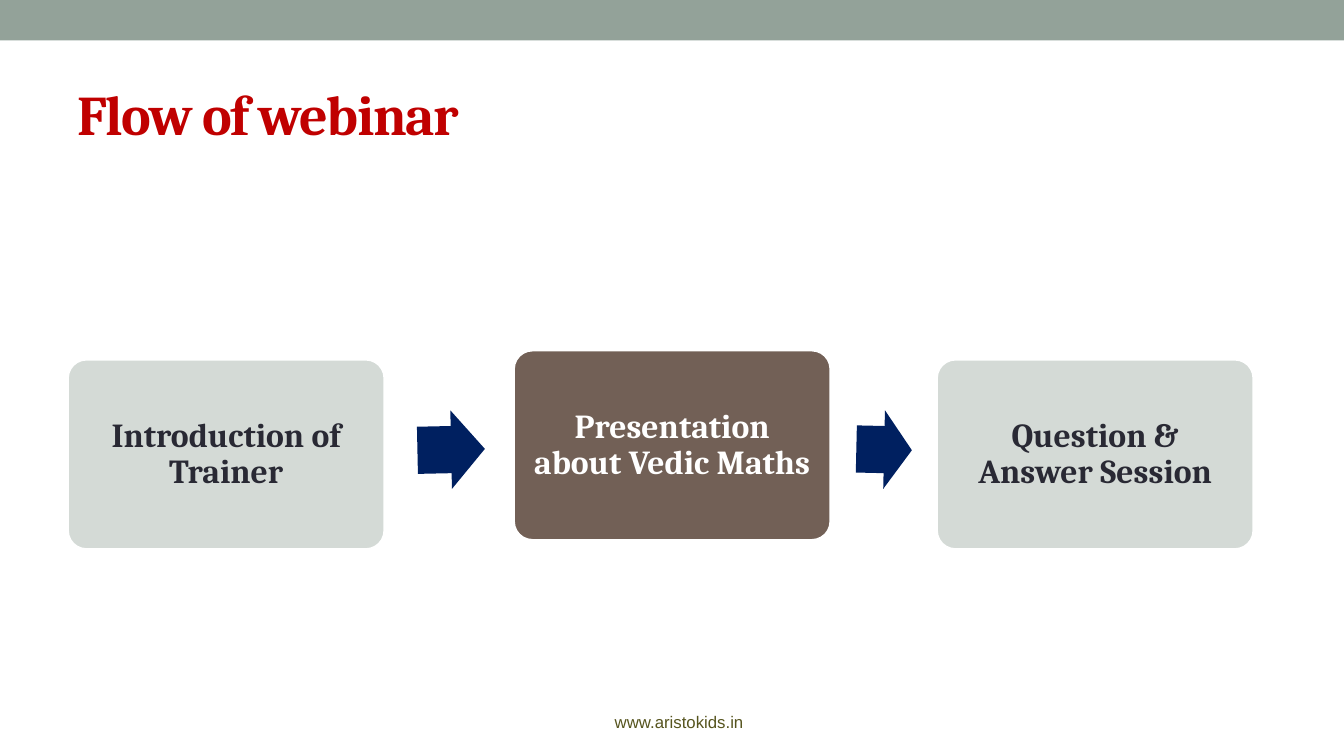
from dataclasses import dataclass

from pptx import Presentation
from pptx.dml.color import RGBColor as RGB
from pptx.enum.shapes import MSO_SHAPE as Shape
from pptx.enum.text import MSO_ANCHOR as Anchor, PP_ALIGN as Align
from pptx.util import Cm, Pt

# Content
TITLE = "Flow of webinar"
WEBSITE = "www.aristokids.in"
# Steps: text, left, top (cm), highlighted
STEPS = [
    ("Introduction of Trainer", 1.7, 9.05, False),
    ("Presentation about Vedic Maths", 12.94, 8.82, True),
    ("Question & Answer Session", 23.6, 9.05, False),
]
# Arrows: left, width (cm), rotation (degrees)
ARROWS = [(10.52, 1.7, 358.8), (21.58, 1.4, 1.3)]


@dataclass(frozen=True)
class Theme:
    heading: str = "Cambria"
    body: str = "Arial"
    title_size: int = 40
    step_size: int = 24
    footer_size: int = 12
    band: RGB = RGB.from_string("93A299")
    title: RGB = RGB.from_string("C00000")
    step: RGB = RGB.from_string("D4DAD6")
    highlight: RGB = RGB.from_string("726056")
    arrow: RGB = RGB.from_string("002060")
    dark: RGB = RGB.from_string("292934")
    white: RGB = RGB.from_string("FFFFFF")
    footer: RGB = RGB.from_string("56541E")


T = Theme()
STEP_W, STEP_H = 8, 4.8
ARROW_TOP, ARROW_H = 10.34, 1.98


def style(p, name, size, color, bold=False, align=None):
    p.alignment = align
    p.font.name, p.font.size, p.font.bold = name, Pt(size), bold
    p.font.color.rgb = color


def add_block(slide, kind, left, top, width, height, fill):
    sp = slide.shapes.add_shape(kind, Cm(left), Cm(top), Cm(width), Cm(height))
    sp.shadow.inherit = False
    sp.fill.solid()
    sp.fill.fore_color.rgb = fill
    sp.line.fill.background()
    return sp


def add_step(slide, text, left, top, highlighted):
    fill = T.highlight if highlighted else T.step
    sp = add_block(slide, Shape.ROUNDED_RECTANGLE, left, top, STEP_W, STEP_H, fill)
    sp.adjustments[0] = 0.1
    sp.line.color.rgb = T.white
    sp.line.width = Pt(2.08)
    tf = sp.text_frame
    tf.word_wrap = True
    tf.vertical_anchor = Anchor.MIDDLE
    tf.margin_left = tf.margin_right = tf.margin_top = tf.margin_bottom = Cm(0.25)
    p = tf.paragraphs[0]
    p.text = text
    p.line_spacing = 0.9
    color = T.white if highlighted else T.dark
    style(p, T.heading, T.step_size, color, True, Align.CENTER)


def add_arrow(slide, left, width, rotation):
    sp = add_block(slide, Shape.RIGHT_ARROW, left, ARROW_TOP, width, ARROW_H, T.arrow)
    sp.adjustments[0], sp.adjustments[1] = 0.6, 0.5
    sp.rotation = rotation


def main():
    prs = Presentation()
    prs.slide_width, prs.slide_height = Cm(33.87), Cm(19.05)
    slide = prs.slides.add_slide(prs.slide_layouts[5])

    # Top band
    add_block(slide, Shape.RECTANGLE, 0, 0, 33.87, 1.02, T.band)

    # Title
    title = slide.shapes.title
    title.left, title.top, title.width, title.height = Cm(1.7), Cm(1.48), Cm(30.48), Cm(2.74)
    title.text_frame.vertical_anchor = Anchor.MIDDLE
    p = title.text_frame.paragraphs[0]
    r = p.add_run()
    r.text = TITLE
    style(p, T.heading, T.title_size, T.title, True, Align.LEFT)
    r.font._element.set("spc", "-100")  # letter spacing of -1 pt

    # Flow
    for step in STEPS:
        add_step(slide, *step)
    for arrow in ARROWS:
        add_arrow(slide, *arrow)

    # Footer
    tf = slide.shapes.add_textbox(Cm(11.4), Cm(17.67), Cm(11.43), Cm(1.02)).text_frame
    tf.word_wrap = True
    tf.vertical_anchor = Anchor.MIDDLE
    p = tf.paragraphs[0]
    p.text = WEBSITE
    style(p, T.body, T.footer_size, T.footer, align=Align.CENTER)

    prs.save("out.pptx")


if __name__ == "__main__":
    main()
